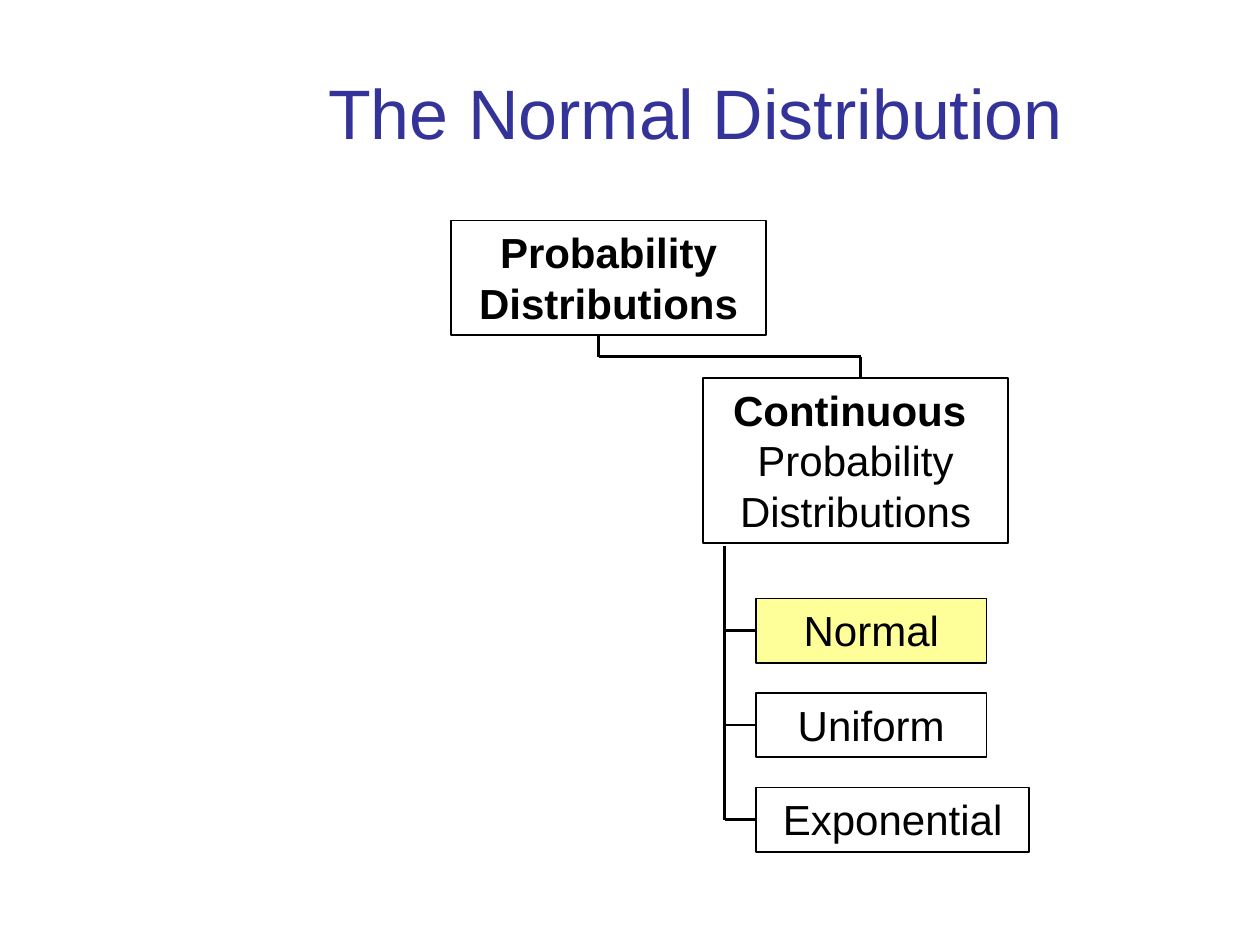
from pptx import Presentation
from pptx.dml.color import RGBColor
from pptx.enum.shapes import MSO_CONNECTOR, MSO_SHAPE
from pptx.enum.text import MSO_ANCHOR, PP_ALIGN
from pptx.oxml.ns import qn
from pptx.util import Inches, Pt
from lxml import etree

COLORS = {"title": "333399", "text": "000000", "line": "000000", "highlight": "FFFF99"}
LEFT_SIDE = 1


def rgb(name):
    return RGBColor.from_string(COLORS[name])


def write_lines(tf, lines, size, color):
    tf.word_wrap = True
    tf.vertical_anchor = MSO_ANCHOR.TOP
    for i, (text, bold) in enumerate(lines):
        p = tf.paragraphs[0] if i == 0 else tf.add_paragraph()
        p.text = text
        p.alignment = PP_ALIGN.CENTER
        p.font.name = "Arial"
        p.font.size = Pt(size)
        p.font.bold = bold
        p.font.color.rgb = rgb(color)


def add_title(slide, text):
    sp = slide.shapes.add_textbox(Inches(1.67), Inches(0.5), Inches(7.7), Inches(0.76))
    write_lines(sp.text_frame, [(text, False)], 40, "title")


def add_box(slide, x, y, w, h, lines, fill=None):
    sp = slide.shapes.add_shape(
        MSO_SHAPE.RECTANGLE, Inches(x), Inches(y), Inches(w), Inches(h))
    sp.shadow.inherit = False
    if fill:
        sp.fill.solid()
        sp.fill.fore_color.rgb = rgb(fill)
    else:
        sp.fill.background()
    sp.line.color.rgb = rgb("line")
    sp.line.width = Pt(1)
    write_lines(sp.text_frame, lines, 24, "text")
    return sp


def add_line(slide, start, end):
    line = slide.shapes.add_connector(
        MSO_CONNECTOR.STRAIGHT, *map(Inches, start), *map(Inches, end))
    line.line.color.rgb = rgb("line")
    line.line.width = Pt(1.5)
    etree.SubElement(line._element.spPr, qn("a:effectLst"))
    return line


def add_polyline(slide, points):
    for start, end in zip(points, points[1:]):
        add_line(slide, start, end)


def add_leaves(slide, trunk_x, trunk_top):
    x, top, step, height = 6, 4.75, 0.75, 0.51
    leaves = [("Normal", 1.83, "highlight"), ("Uniform", 1.83, None),
              ("Exponential", 2.17, None)]
    for i, (name, width, fill) in enumerate(leaves):
        y = top + i * step
        middle = y + height / 2
        box = add_box(slide, x, y, width, height, [(name, False)], fill)
        branch = add_line(slide, (x, middle), (trunk_x, middle))
        branch.begin_connect(box, LEFT_SIDE)
    add_line(slide, (trunk_x, trunk_top), (trunk_x, middle))


def main():
    prs = Presentation()
    prs.slide_width, prs.slide_height = Inches(10), Inches(7.5)
    slide = prs.slides.add_slide(prs.slide_layouts[6])
    add_title(slide, "The Normal Distribution")
    add_polyline(slide, [(4.75, 2.67), (4.75, 2.83), (6.83, 2.83), (6.83, 3)])
    add_box(slide, 3.58, 1.75, 2.5, 0.91, [("Probability Distributions", True)])
    add_box(slide, 5.58, 3, 2.42, 1.31,
            [("Continuous ", True), ("Probability Distributions", False)])
    add_leaves(slide, 5.75, 4.33)
    prs.save("out.pptx")


if __name__ == "__main__":
    main()
